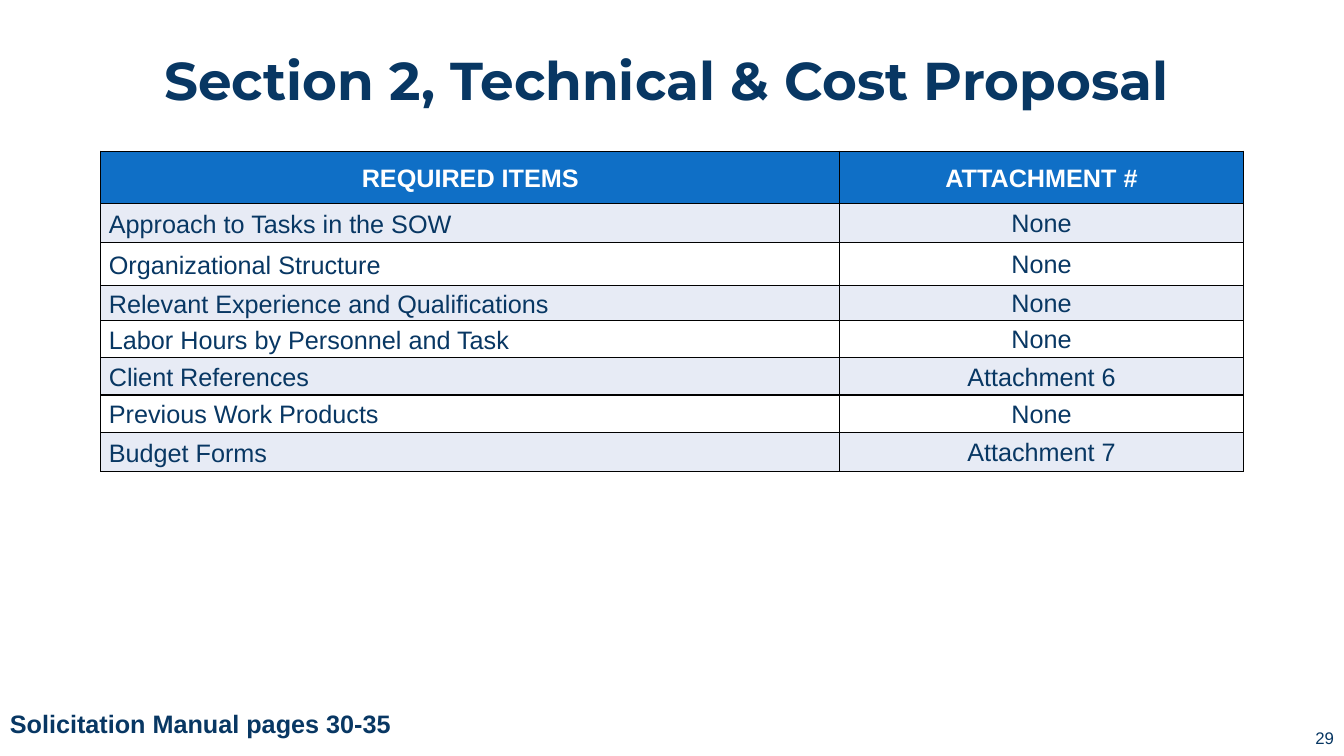
from pptx import Presentation
from pptx.dml.color import RGBColor
from pptx.enum.text import MSO_ANCHOR as Anchor, PP_ALIGN as Align
from pptx.oxml import parse_xml
from pptx.oxml.ns import nsdecls
from pptx.util import Inches, Pt

NAVY, BLUE, PALE, WHITE, BLACK = "083763", "0F6FC6", "E7EBF5", "FFFFFF", "000000"


def rgb(value):
    return RGBColor.from_string(value)


def style(paragraph, size, color, bold=False, face="Arial", align=Align.LEFT):
    paragraph.alignment = align
    font = paragraph.font
    font.name, font.size, font.bold = face, Pt(size), bold
    font.color.rgb = rgb(color)


prs = Presentation()
prs.slide_width, prs.slide_height = Inches(13.33), Inches(7.5)
slide = prs.slides.add_slide(prs.slide_layouts[5])

# Title
title = slide.shapes.title
title.left, title.top = Inches(1.53), Inches(0.26)
title.width, title.height = Inches(11.09), Inches(1.14)
title.text_frame.text = "Section 2, Technical & Cost Proposal"
title.text_frame.vertical_anchor = Anchor.MIDDLE
heading = title.text_frame.paragraphs[0]
heading.line_spacing = 0.9
style(heading, 38, NAVY, True, "Montserrat")

# Required items and their attachments, with row heights
requirements = [
    ("REQUIRED ITEMS", "ATTACHMENT #", 0.52),
    ("Approach to Tasks in the SOW", "None", 0.39),
    ("Organizational Structure", "None", 0.42),
    ("Relevant Experience and Qualifications", "None", 0.35),
    ("Labor Hours by Personnel and Task", "None", 0.37),
    ("Client References", "Attachment 6", 0.37),
    ("Previous Work Products", "None", 0.37),
    ("Budget Forms", "Attachment 7", 0.39),
]
table = slide.shapes.add_table(len(requirements), 2, Inches(1), Inches(1.5),
                               Inches(11.33), Inches(3.18)).table
table.columns[0].width, table.columns[1].width = Inches(7.33), Inches(4)

for row, (item, attachment, height) in enumerate(requirements):
    table.rows[row].height = Inches(height)
    header = row == 0
    fill = BLUE if header else PALE if row % 2 else WHITE
    for col, text in enumerate((item, attachment)):
        cell = table.cell(row, col)
        cell.text = text
        cell.vertical_anchor = Anchor.MIDDLE
        cell.margin_left = cell.margin_right = Inches(0.07 if col else 0.08)
        cell.margin_top = Inches(0 if col else 0.01)
        cell.margin_bottom = 0
        paragraph = cell.text_frame.paragraphs[0]
        paragraph.line_spacing = 1.07
        style(paragraph, 18, WHITE if header else NAVY, header,
              align=Align.CENTER if header or col else Align.LEFT)
        # Borders come before the fill in the cell properties
        for side in ("lnL", "lnR", "lnT", "lnB"):
            cell._tc.get_or_add_tcPr().append(parse_xml(
                f'<a:{side} {nsdecls("a")} w="{Pt(1)}"><a:solidFill>'
                f'<a:srgbClr val="{BLACK}"/></a:solidFill></a:{side}>'))
        cell.fill.solid()
        cell.fill.fore_color.rgb = rgb(fill)

# Manual reference
reference = slide.shapes.add_textbox(0, Inches(6.98), Inches(4.09), Inches(0.4)).text_frame
reference.word_wrap = False
reference.text = "Solicitation Manual pages 30-35"
style(reference.paragraphs[0], 18, NAVY, True)

# Page number
page = slide.shapes.add_textbox(Inches(11.36), Inches(7.12), Inches(1.97), Inches(0.4)).text_frame
page.word_wrap = True
page.vertical_anchor = Anchor.MIDDLE
page.text = "29"
style(page.paragraphs[0], 12, NAVY, align=Align.RIGHT)

prs.save("out.pptx")
